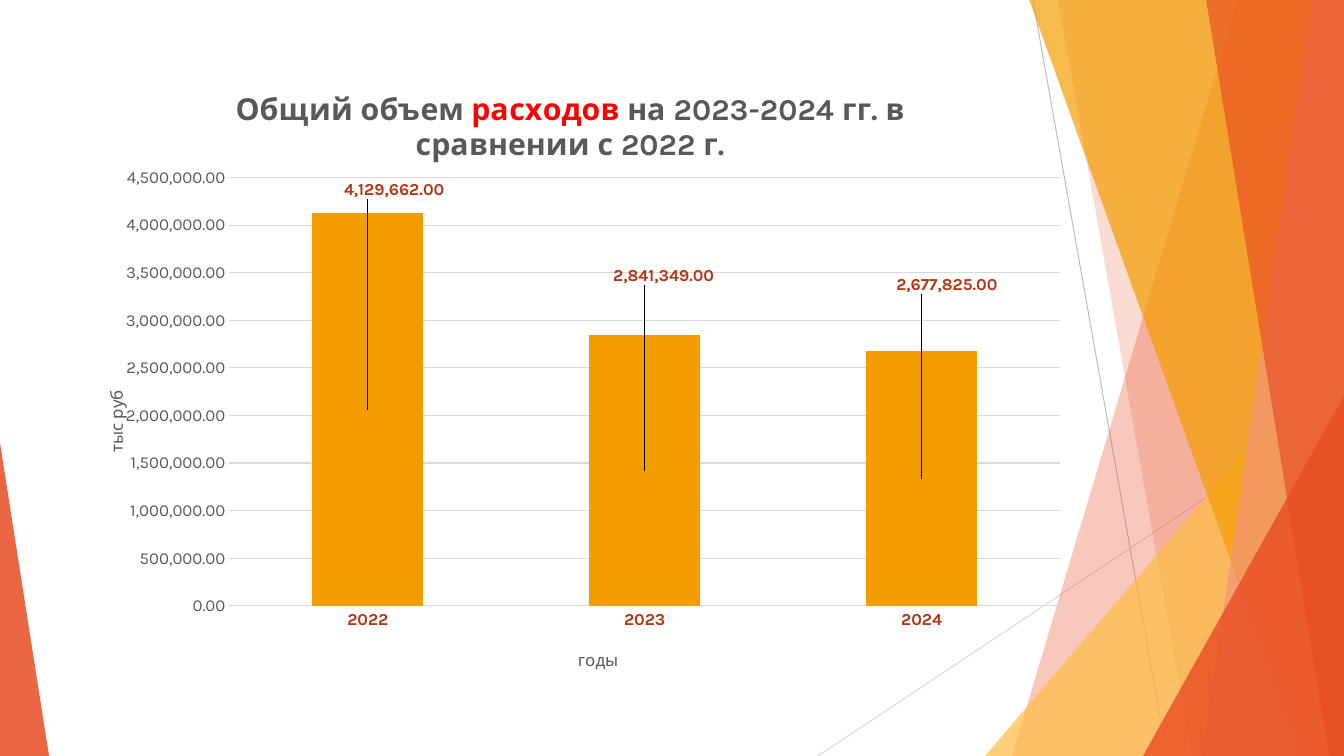
from lxml.etree import SubElement
from pptx import Presentation
from pptx.chart.data import CategoryChartData
from pptx.dml.color import RGBColor
from pptx.enum.chart import XL_CHART_TYPE, XL_TICK_MARK
from pptx.enum.shapes import MSO_CONNECTOR, MSO_SHAPE
from pptx.oxml.ns import qn
from pptx.util import Pt

PX = 914400 / 100.8
WIDTH, HEIGHT = 1344, 756
THEME = {
    "font": "Karla", "title_size": 21.6, "label_size": 12, "base_size": 10,
    "text": RGBColor.from_string("595959"), "accent": RGBColor.from_string("FF0000"),
    "label": RGBColor.from_string("B53513"), "grid": RGBColor.from_string("D9D9D9"),
    "rule": RGBColor.from_string("BFBFBF"), "bar": RGBColor.from_string("F49D00"),
    "red": RGBColor.from_string("E84C22"), "yellow": RGBColor.from_string("FFBD47"),
    "salmon": RGBColor.from_string("F1947A"),
}
CHART_LEFT, CHART_TOP, CHART_WIDTH, CHART_HEIGHT = 42, 79, 1053, 598


def style_font(font, size, color, bold=False):
    font.name, font.size, font.bold = THEME["font"], Pt(size), bold
    font.color.rgb = color


def place(element, index, settings):
    """Give a chart part a manual layout as the child at index."""
    for old in element.findall(qn("c:layout")):
        element.remove(old)
    layout = SubElement(element, qn("c:layout"))
    element.insert(index, layout)
    manual = SubElement(layout, qn("c:manualLayout"))
    for name, value in settings.items():
        SubElement(manual, qn(f"c:{name}")).set("val", str(value))


presentation = Presentation()
presentation.slide_width = round(WIDTH * PX)
presentation.slide_height = round(HEIGHT * PX)
slide = presentation.slides.add_slide(presentation.slide_layouts[6])

# Thin background lines
for x1, y1, x2, y2, color in (
    (1033, 0, 1167, HEIGHT, "rule"),
    (WIDTH, 406, 818, HEIGHT, "grid"),
):
    line = slide.shapes.add_connector(
        MSO_CONNECTOR.STRAIGHT, *(round(value * PX) for value in (x1, y1, x2, y2)))
    line.line.color.rgb = THEME[color]
    line.line.width = Pt(0.75)
    SubElement(line._element.spPr, qn("a:effectLst"))

# Facets: bands (top x, bottom x) reach the right edge;
# triangles (left, top, width, apex) stand on the bottom edge
facets = (
    ((1238, 1012), "red", 30),
    ((1058, 1192), "red", 20),
    ((985, 336, 359, 1), "yellow", 72),
    ((1029, 1301), "bar", 70),
    ((1313, 1202), "salmon", 70),
    ((1206, 1329), "red", 65),
    ((1143, 396, 201, 1), "red", 80),
    ((0, 443, 49, 0), "red", 85),
)
for geometry, color, opacity in facets:
    if len(geometry) == 2:
        top_x, bottom_x = geometry
        builder = slide.shapes.build_freeform(top_x, -1, scale=PX)
        builder.add_line_segments(
            [(WIDTH, -1), (WIDTH, HEIGHT), (bottom_x, HEIGHT)], close=True)
        shape = builder.convert_to_shape()
    else:
        left, top, width, apex = geometry
        shape = slide.shapes.add_shape(
            MSO_SHAPE.ISOSCELES_TRIANGLE,
            *(round(value * PX) for value in (left, top, width, HEIGHT - top)))
        shape.adjustments[0] = apex
    shape.shadow.inherit = False
    shape.line.fill.background()
    shape.fill.solid()
    shape.fill.fore_color.rgb = THEME[color]
    fill_color = shape._element.spPr.find(qn("a:solidFill"))[0]
    SubElement(fill_color, qn("a:alpha")).set("val", str(opacity * 1000))

# Column chart
title_parts = (("Общий объем ", "text"), ("расходов", "accent"),
               (" на 2023-2024 гг. в сравнении с 2022 г.", "text"))
data = CategoryChartData(number_format="#,##0.00")
data.categories = ["2022", "2023", "2024"]
data.add_series("".join(text for text, _ in title_parts), [4129662, 2841349, 2677825])
chart = slide.shapes.add_chart(
    XL_CHART_TYPE.COLUMN_STACKED,
    *(round(value * PX) for value in (CHART_LEFT, CHART_TOP, CHART_WIDTH, CHART_HEIGHT)),
    data).chart
chart.has_legend = False
chart.font.name, chart.font.size = THEME["font"], Pt(THEME["base_size"])
plot = chart.plots[0]
plot.vary_by_categories = False
plot.gap_width, plot.overlap = 150, 100
place(chart._chartSpace.chart.plotArea, 0, {
    "layoutTarget": "inner", "xMode": "edge", "yMode": "edge",
    "x": 0.178, "y": 0.165, "w": 0.789, "h": 0.716})

# Axes
category_axis, value_axis = chart.category_axis, chart.value_axis
for axis, color, bold in ((category_axis, "label", True), (value_axis, "text", False)):
    axis.major_tick_mark = axis.minor_tick_mark = XL_TICK_MARK.NONE
    style_font(axis.tick_labels.font, THEME["label_size"], THEME[color], bold)
category_axis.format.line.color.rgb = THEME["grid"]
category_axis.format.line.width = Pt(1)
value_axis.format.line.fill.background()
value_axis.minimum_scale, value_axis.maximum_scale = 0, 4500000
value_axis.major_unit = 500000
value_axis.tick_labels.number_format = "#,##0.00"
value_axis.tick_labels.number_format_is_linked = False
value_axis.major_gridlines.format.line.color.rgb = THEME["grid"]
value_axis.major_gridlines.format.line.width = Pt(0.75)

# Chart and axis titles
titles = (
    (chart.chart_title, title_parts, "title_size", True, 233, 87),
    (category_axis.axis_title, (("годы", "text"),), "label_size", False, 575, 646),
    (value_axis.axis_title, (("тыс руб", "text"),), "label_size", False, 102, 387),
)
for title, parts, size, bold, left, top in titles:
    paragraph = title.text_frame.paragraphs[0]
    for text, color in parts:
        run = paragraph.add_run()
        run.text = text
        style_font(run.font, THEME[size], THEME[color], bold)
    place(title._element, 1, {
        "xMode": "edge", "yMode": "edge",
        "x": round((left - CHART_LEFT) / CHART_WIDTH, 3),
        "y": round((top - CHART_TOP) / CHART_HEIGHT, 3)})
value_axis.axis_title.text_frame._txBody.bodyPr.set("rot", "-5400000")

# Bars and their labels, each moved from the middle of its bar
series = plot.series[0]
series.format.fill.solid()
series.format.fill.fore_color.rgb = THEME["bar"]
labels = series.data_labels
labels.show_value = True
labels.number_format, labels.number_format_is_linked = "#,##0.00", False
style_font(labels.font, THEME["label_size"], THEME["label"], True)
for index, (right, down) in enumerate(((26, -220), (19, -195), (25, -194))):
    label = series.points[index].data_label
    style_font(label.font, THEME["label_size"], THEME["label"], True)
    place(labels._element.findall(qn("c:dLbl"))[index], 1, {
        "x": round(right / CHART_WIDTH, 3), "y": round(down / CHART_HEIGHT, 3)})

presentation.save("out.pptx")
